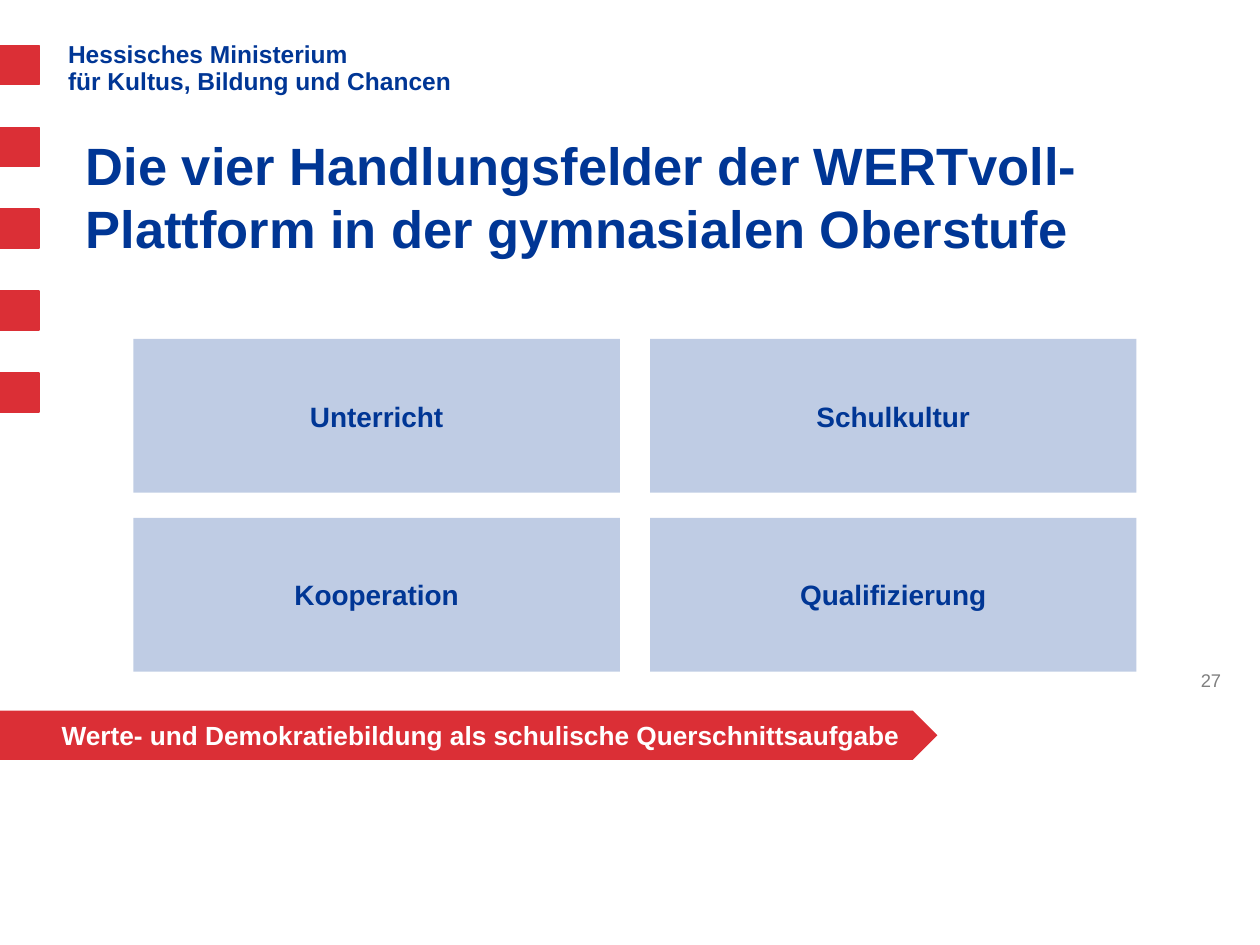
from dataclasses import dataclass
from itertools import product

from lxml import etree
from pptx import Presentation
from pptx.dml.color import RGBColor
from pptx.enum.shapes import MSO_SHAPE
from pptx.enum.text import MSO_ANCHOR, MSO_AUTO_SIZE, PP_ALIGN
from pptx.oxml.ns import qn
from pptx.util import Inches, Pt

RECTANGLE, PENTAGON = MSO_SHAPE.RECTANGLE, MSO_SHAPE.PENTAGON
TOP, MIDDLE, BOTTOM = MSO_ANCHOR.TOP, MSO_ANCHOR.MIDDLE, MSO_ANCHOR.BOTTOM
LEFT, CENTER, RIGHT = PP_ALIGN.LEFT, PP_ALIGN.CENTER, PP_ALIGN.RIGHT
NO_AUTOFIT = MSO_AUTO_SIZE.NONE


@dataclass(frozen=True)
class Theme:
    font: str = "Arial"
    blue: RGBColor = RGBColor(0x00, 0x36, 0x95)
    red: RGBColor = RGBColor(0xDB, 0x2F, 0x36)
    gray: RGBColor = RGBColor(0x80, 0x80, 0x80)
    white: RGBColor = RGBColor(0xFF, 0xFF, 0xFF)
    title: float = 30
    field: float = 16
    banner: float = 15
    ministry: float = 14
    page: float = 10.5


THEME = Theme()


def write(frame, text, size, color, bold=True, align=LEFT, anchor=TOP):
    frame.text = text
    frame.word_wrap = True
    frame.auto_size = NO_AUTOFIT
    frame.vertical_anchor = anchor
    for paragraph in frame.paragraphs:
        paragraph.alignment = align
        for run in paragraph.runs:
            run.font.name = THEME.font
            run.font.size = Pt(size)
            run.font.bold = bold
            run.font.color.rgb = color


def set_insets(frame, side, vertical):
    frame.margin_left = frame.margin_right = Inches(side)
    frame.margin_top = frame.margin_bottom = Inches(vertical)


def add_block(slide, kind, left, top, width, height, color):
    block = slide.shapes.add_shape(
        kind, Inches(left), Inches(top), Inches(width), Inches(height))
    block.shadow.inherit = False
    block.fill.solid()
    block.fill.fore_color.rgb = color
    block.line.fill.background()
    return block


def set_opacity(block, percent):
    color = block.fill._xPr.find(qn("a:solidFill"))[0]
    etree.SubElement(color, qn("a:alpha"), val=str(percent * 1000))


def add_label(slide, left, top, width, height):
    return slide.shapes.add_textbox(
        Inches(left), Inches(top), Inches(width), Inches(height)).text_frame


def add_edge_squares(slide):
    for index in range(5):
        square = add_block(
            slide, RECTANGLE, 0, 0.36 + index * 0.65, 0.31, 0.31, THEME.red)
        square.line.color.rgb = THEME.red
        square.line.width = Pt(0.75)


def add_ministry(slide):
    ministry = add_label(slide, 0.54, 0.29, 8.03, 0.71)
    write(ministry, "Hessisches Ministerium\nfür Kultus, Bildung und Chancen",
          THEME.ministry, THEME.blue)
    set_insets(ministry, 0, 0.05)
    for paragraph in ministry.paragraphs:
        paragraph.line_spacing = 0.9


def set_title(slide):
    title = slide.shapes.title
    title.left, title.top = Inches(0.58), Inches(0.98)
    title.width, title.height = Inches(9.22), Inches(1.08)
    write(title.text_frame,
          "Die vier Handlungsfelder der WERTvoll-Plattform"
          " in der gymnasialen Oberstufe",
          THEME.title, THEME.blue, anchor=BOTTOM)
    set_insets(title.text_frame, 0.1, 0)


def add_fields(slide):
    names = ("Unterricht", "Schulkultur", "Kooperation", "Qualifizierung")
    for name, (row, column) in zip(names, product(range(2), repeat=2)):
        field = add_block(slide, RECTANGLE, 1.06 + column * 4.1,
                          2.69 + row * 1.42, 3.86, 1.22, THEME.blue)
        set_opacity(field, 25)
        write(field.text_frame, name, THEME.field, THEME.blue,
              align=CENTER, anchor=MIDDLE)


def add_banner(slide):
    banner = add_block(slide, PENTAGON, 0, 5.64, 7.44, 0.39, THEME.red)
    write(banner.text_frame,
          "Werte- und Demokratiebildung als schulische Querschnittsaufgabe",
          THEME.banner, THEME.white, anchor=MIDDLE)
    properties = banner.text_frame.paragraphs[0]._p.get_or_add_pPr()
    properties.set("marL", str(Inches(0.39)))


def add_page_number(slide):
    page = add_label(slide, 9.02, 5.26, 0.77, 0.25)
    write(page, "27", THEME.page, THEME.gray, bold=False, align=RIGHT)


def main():
    presentation = Presentation()
    presentation.slide_width = Inches(10)
    presentation.slide_height = Inches(7.5)
    slide = presentation.slides.add_slide(presentation.slide_layouts[5])
    add_edge_squares(slide)
    add_ministry(slide)
    set_title(slide)
    add_page_number(slide)
    add_fields(slide)
    add_banner(slide)
    presentation.save("out.pptx")


if __name__ == "__main__":
    main()
